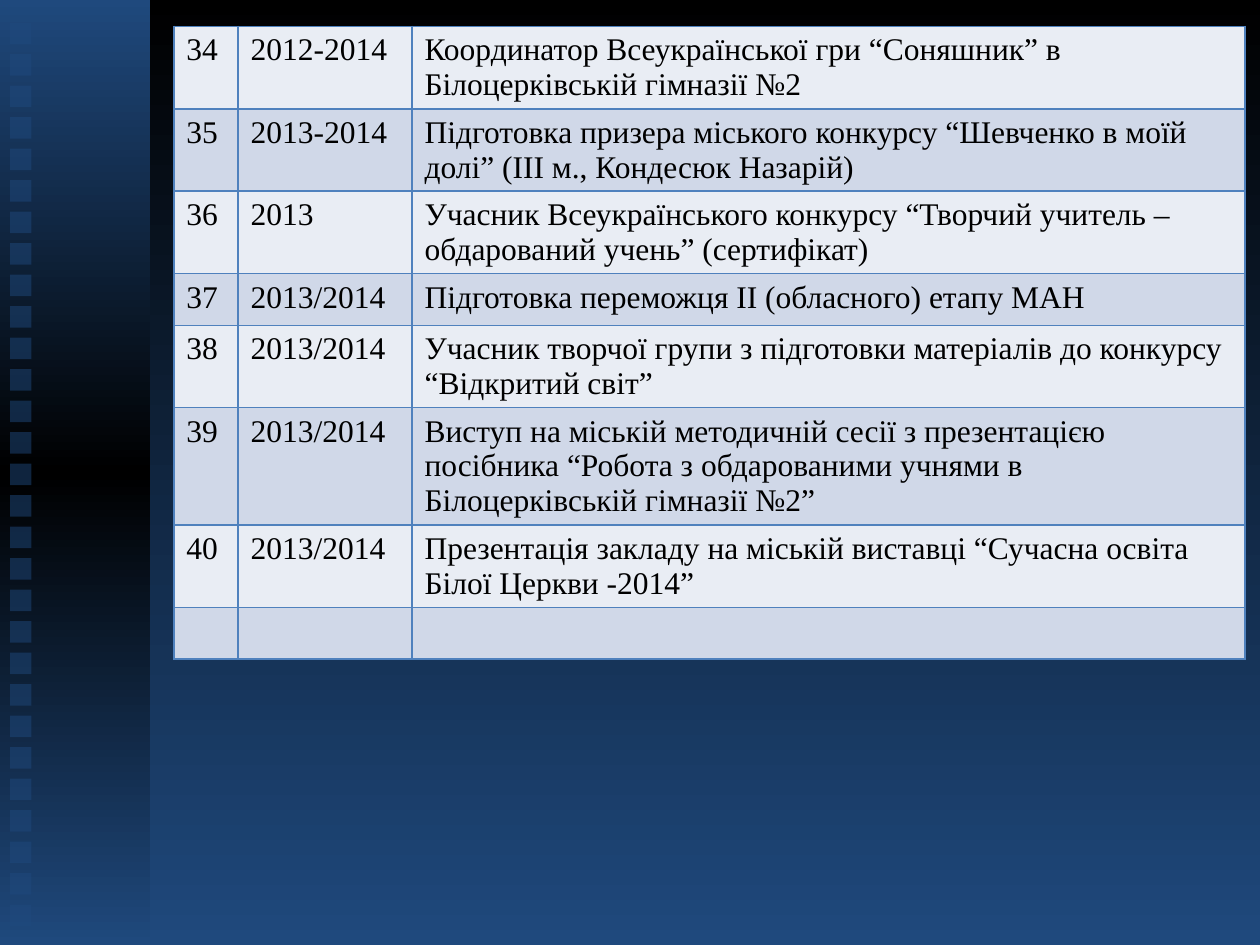
from lxml.etree import SubElement
from pptx import Presentation
from pptx.dml.color import RGBColor
from pptx.enum.shapes import MSO_SHAPE as Preset
from pptx.oxml.ns import qn
from pptx.util import Inches, Pt

COLORS = {
    "navy": "1F497D",
    "black": "000000",
    "border": "4F81BD",
    "light": "E9EDF4",
    "dark": "D0D8E8",
}
FONT = "Times New Roman"
ACHIEVEMENTS = [
    ("34", "2012-2014", "Координатор Всеукраїнської гри “Соняшник” в Білоцерківській гімназії №2"),
    ("35", "2013-2014", "Підготовка призера міського конкурсу “Шевченко в моїй долі” (ІІІ м., Кондесюк Назарій)"),
    ("36", "2013", "Учасник Всеукраїнського конкурсу “Творчий учитель – обдарований учень” (сертифікат)"),
    ("37", "2013/2014", "Підготовка переможця ІІ (обласного) етапу МАН"),
    ("38", "2013/2014", "Учасник творчої групи з підготовки матеріалів до конкурсу “Відкритий світ”"),
    ("39", "2013/2014", "Виступ на міській методичній сесії з презентацією посібника "
     "“Робота з обдарованими учнями в Білоцерківській гімназії №2”"),
    ("40", "2013/2014", "Презентація закладу на міській виставці “Сучасна освіта Білої Церкви -2014”"),
    ("", "", ""),
]


def rgb(name):
    return RGBColor.from_string(COLORS[name])


def paint_gradient(fill, owner, names):
    fill.gradient()
    fill.gradient_angle = 270
    stops = owner.find(".//" + qn("a:gsLst"))
    for stop in list(stops):
        stops.remove(stop)
    for index, name in enumerate(names):
        position = index * 100000 // (len(names) - 1)
        stop = SubElement(stops, qn("a:gs"), pos=str(position))
        SubElement(stop, qn("a:srgbClr"), val=COLORS[name])


def add_plain_rect(slide, left, top, width, height):
    rect = slide.shapes.add_shape(Preset.RECTANGLE, left, top, width, height)
    rect.shadow.inherit = False
    rect.line.fill.background()
    return rect


def add_sidebar(slide, left, top, width, height):
    band = add_plain_rect(slide, left, top, width, height)
    paint_gradient(band.fill, band._element, ["navy", "black", "navy"])
    side, pitch = Inches(0.17), Inches(0.25)
    for index in range(29):
        square = add_plain_rect(slide, left + Inches(0.08),
                                top + Inches(0.18) + index * pitch, side, side)
        square.fill.solid()
        square.fill.fore_color.rgb = rgb("navy")
        color = square._element.spPr.find(".//" + qn("a:srgbClr"))
        SubElement(color, qn("a:alpha"), val="50000")


def add_borders(cell):
    properties = cell._tc.get_or_add_tcPr()
    for index, side in enumerate(("a:lnL", "a:lnR", "a:lnT", "a:lnB")):
        border = SubElement(properties, qn(side), w=str(Pt(1)))
        fill = SubElement(border, qn("a:solidFill"))
        SubElement(fill, qn("a:srgbClr"), val=COLORS["border"])
        properties.insert(index, border)


def add_achievements(slide, left, top, width, height):
    frame = slide.shapes.add_table(len(ACHIEVEMENTS), 3, left, top, width, height)
    table = frame.table
    table.first_row = False
    number_width, year_width = Inches(0.51), Inches(1.38)
    widths = (number_width, year_width, width - number_width - year_width)
    for column, column_width in zip(table.columns, widths):
        column.width = column_width
    for row_index, (row, texts) in enumerate(zip(table.rows, ACHIEVEMENTS)):
        row.height = Inches(0.41)
        for cell, text in zip(row.cells, texts):
            cell.fill.solid()
            cell.fill.fore_color.rgb = rgb("dark" if row_index % 2 else "light")
            add_borders(cell)
            if text:
                run = cell.text_frame.paragraphs[0].add_run()
                run.text = text
                run.font.name = FONT
                run.font.size = Pt(18)
                run.font.color.rgb = rgb("black")
    frame.height = height


def main():
    deck = Presentation()
    deck.slide_width, deck.slide_height = Inches(10), Inches(7.5)
    slide = deck.slides.add_slide(deck.slide_layouts[6])
    paint_gradient(slide.background.fill, slide._element, ["black", "navy"])
    add_sidebar(slide, Inches(0), Inches(0), Inches(1.19), deck.slide_height)
    add_achievements(slide, Inches(1.38), Inches(0.21), Inches(8.5), Inches(5.31))
    deck.save("out.pptx")


if __name__ == "__main__":
    main()
